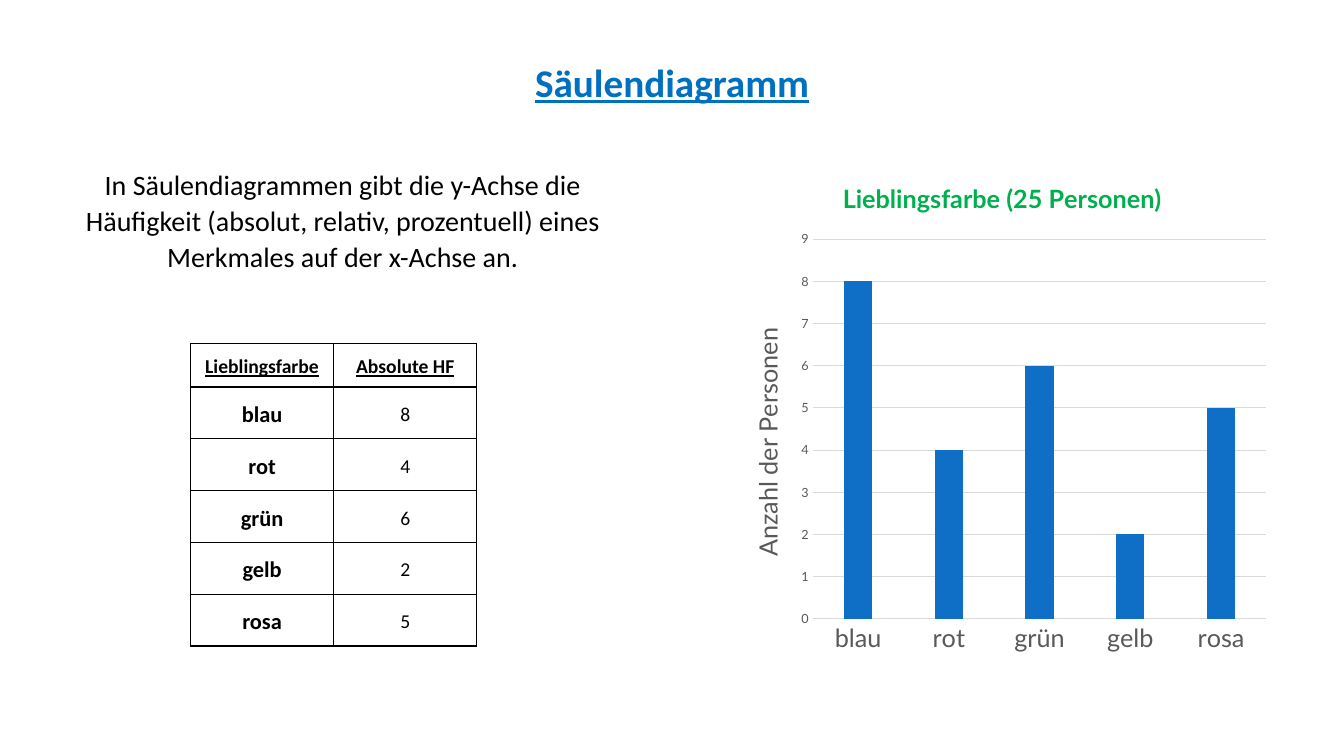
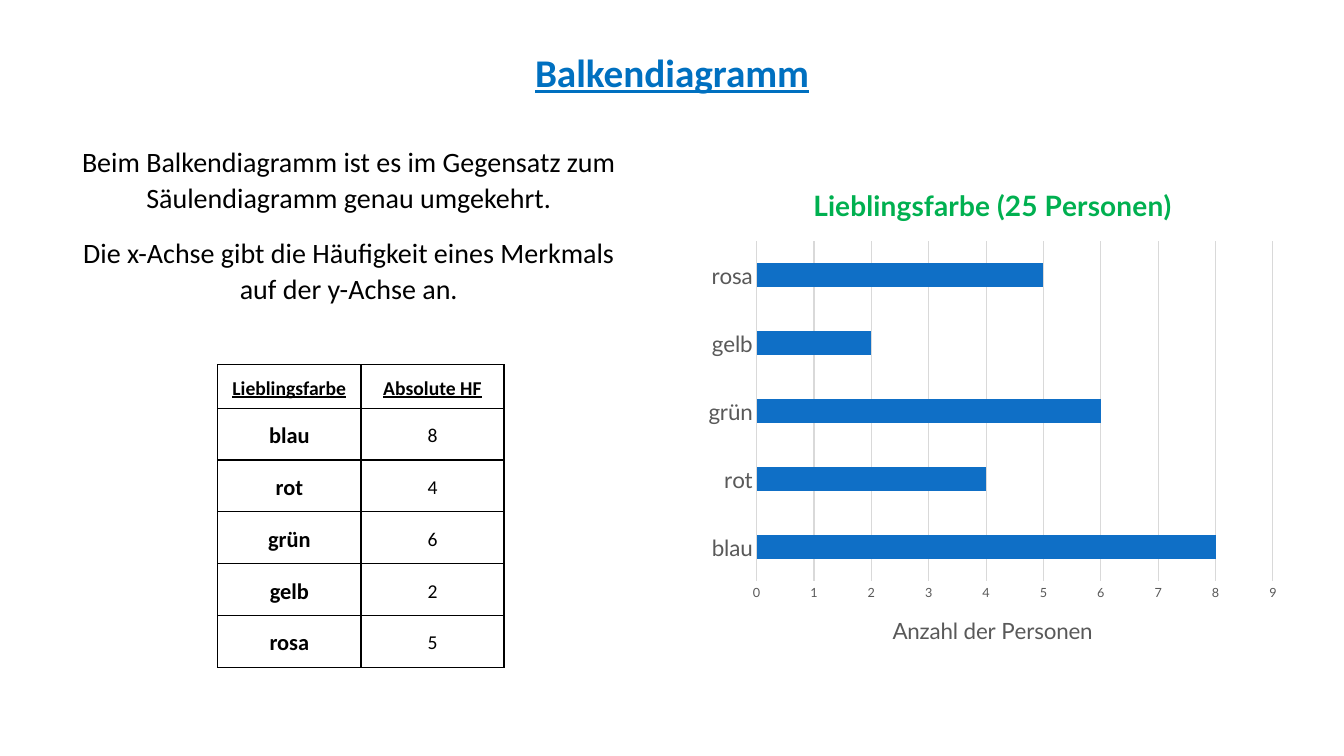
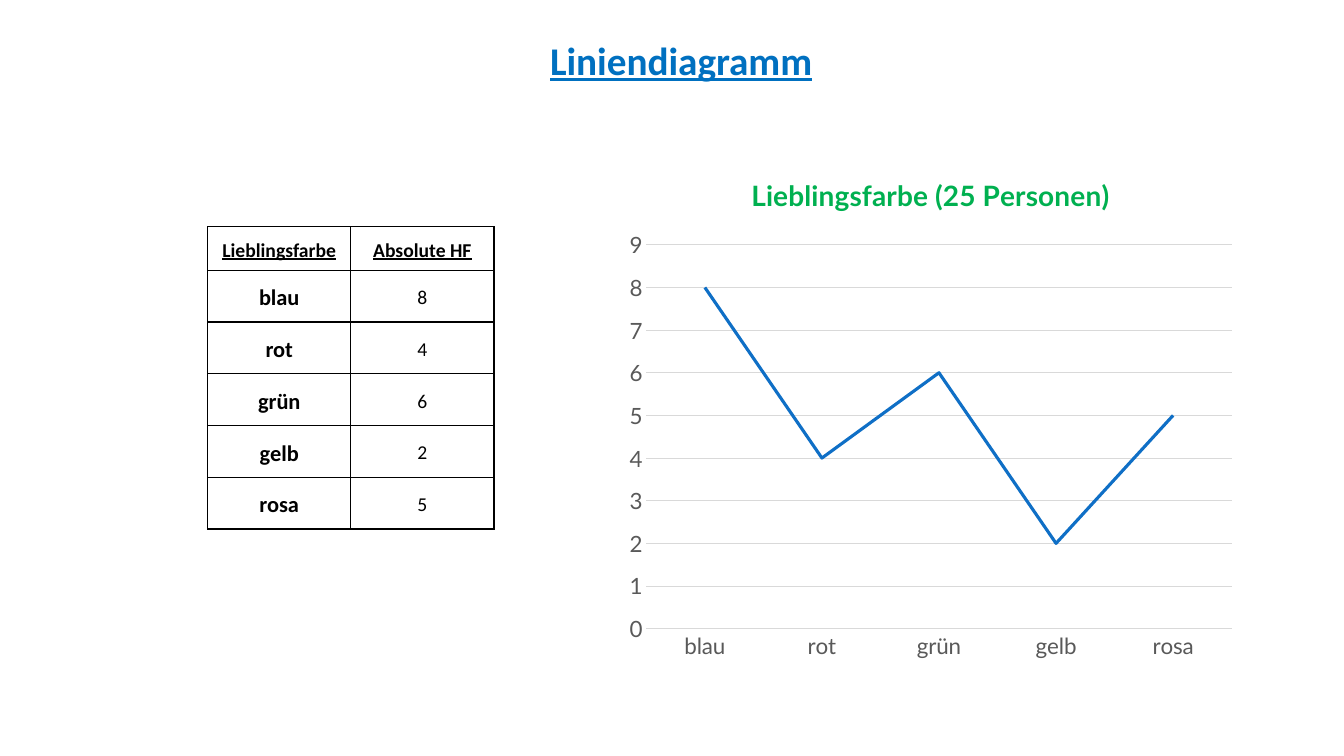
from lxml import etree
from pptx import Presentation
from pptx.chart.data import CategoryChartData as ChartData
from pptx.dml.color import RGBColor as RGB
from pptx.enum.chart import XL_CHART_TYPE as Kind, XL_TICK_MARK as Tick
from pptx.enum.text import MSO_ANCHOR as Anchor, MSO_AUTO_SIZE as Fit, PP_ALIGN as Align
from pptx.oxml.ns import qn
from pptx.util import Inches, Pt

# Shared look and data
COLORS = {"title": "0070C0", "text": "000000", "head": "00B050",
          "axis": "595959", "grid": "D9D9D9", "data": "0F6FC6"}
FONT, CHART_FONT = "Calibri", "Lato"
VOTES = {"blau": 8, "rot": 4, "grün": 6, "gelb": 2, "rosa": 5}
COL_W, HEAD_H, TABLE_H = 1.42, 0.43, 3


def color(name):
    return RGB.from_string(COLORS[name])


def style(font, size, tone, bold=False, line=False, face=FONT):
    font.name, font.size = face, Pt(size)
    font.bold, font.underline = bold, line
    font.color.rgb = color(tone)


def space(para, after=8):
    para.alignment = Align.CENTER
    para.line_spacing, para.space_before, para.space_after = 1.07, Pt(0), Pt(after)


def place(shape, left, top, width, height):
    shape.left, shape.top = Inches(left), Inches(top)
    shape.width, shape.height = Inches(width), Inches(height)


def add_page(deck, text, *spot):
    """Add a slide with its underlined title."""
    page = deck.slides.add_slide(deck.slide_layouts[5])
    title = page.shapes.title
    place(title, *spot)
    frame = title.text_frame
    frame.text = text
    frame.word_wrap, frame.auto_size = False, Fit.NONE
    frame.vertical_anchor = Anchor.TOP
    para = frame.paragraphs[0]
    para.alignment = Align.CENTER
    style(para.runs[0].font, 28, "title", True, True)
    return page


def add_note(page, texts, *spot):
    """Add centred explanatory paragraphs."""
    frame = page.shapes.add_textbox(*map(Inches, spot)).text_frame
    frame.word_wrap = True
    frame.text = "\n".join(texts)
    for para in frame.paragraphs:
        space(para, 13.5)
        style(para.runs[0].font, 20, "text")


def add_edges(cell):
    props = cell._tc.get_or_add_tcPr()
    for side in "LRTB":
        edge = etree.SubElement(props, qn(f"a:ln{side}"), w=str(Pt(1)))
        fill = etree.SubElement(edge, qn("a:solidFill"))
        etree.SubElement(fill, qn("a:srgbClr"), val=COLORS["text"])


def fill_cell(cell, text, size, bold, line):
    add_edges(cell)
    cell.fill.background()
    cell.vertical_anchor = Anchor.MIDDLE
    cell.margin_left = cell.margin_right = Inches(0.14)
    cell.margin_top, cell.margin_bottom = Inches(0.02), 0
    cell.text_frame.text = text
    para = cell.text_frame.paragraphs[0]
    space(para)
    style(para.runs[0].font, size, "text", bold, line)


def add_votes(page, left, top):
    """Add the frequency table."""
    rows = [("Lieblingsfarbe", "Absolute HF"), *VOTES.items()]
    table = page.shapes.add_table(len(rows), 2, Inches(left), Inches(top),
                                  Inches(2 * COL_W), Inches(TABLE_H)).table
    table.first_row = table.horz_banding = False
    for col in table.columns:
        col.width = Inches(COL_W)
    for r, row in enumerate(rows):
        head = r == 0
        table.rows[r].height = Inches(HEAD_H if head else (TABLE_H - HEAD_H) / len(VOTES))
        for c, value in enumerate(row):
            name = c == 0
            size = 16 if name and not head else 14
            fill_cell(table.cell(r, c), str(value), size, head or name, head)


def set_title(title, text, size, tone, bold):
    title.text_frame.text = text
    run = title.text_frame.paragraphs[0].runs[0]
    style(run.font, size, tone, bold, face=CHART_FONT)


def set_axis(axis, size):
    axis.major_tick_mark = axis.minor_tick_mark = Tick.NONE
    style(axis.tick_labels.font, size, "axis", face=CHART_FONT)


def set_line(line, tone, width):
    line.color.rgb = color(tone)
    line.width = Pt(width)


def add_graph(page, kind, spot, head, cat_size, val_size, label=None):
    """Add the chart with its heading and axes."""
    data = ChartData()
    data.categories = list(VOTES)
    data.add_series("Series 1", list(VOTES.values()))
    chart = page.shapes.add_chart(kind, *map(Inches, spot), data).chart
    style(chart.font, 10, "text", face=CHART_FONT)
    chart.has_legend = False
    chart.has_title = True
    set_title(chart.chart_title, "Lieblingsfarbe (25 Personen)", head, "head", True)

    cats, vals = chart.category_axis, chart.value_axis
    set_axis(cats, cat_size)
    set_line(cats.format.line, "grid", 0.75)
    set_axis(vals, val_size)
    vals.format.line.fill.background()
    vals.minimum_scale, vals.maximum_scale, vals.major_unit = 0, 9, 1
    vals.has_major_gridlines = True
    set_line(vals.major_gridlines.format.line, "grid", 0.75)
    if label:
        set_title(vals.axis_title, label, cat_size, "axis", False)
        turn = -5400000 if kind == Kind.COLUMN_CLUSTERED else 0
        for body in vals.axis_title._element.iter(qn("a:bodyPr")):
            body.set("rot", str(turn))

    plot = chart.plots[0]
    plot.vary_by_categories = False
    series = plot.series[0]
    if kind == Kind.LINE:
        series.smooth = False
        set_line(series.format.line, "data", 2.25)
    else:
        series.format.fill.solid()
        series.format.fill.fore_color.rgb = color("data")
    return plot


def main():
    deck = Presentation()
    deck.slide_width, deck.slide_height = Inches(13.33), Inches(7.5)
    label = "Anzahl der Personen"

    # Column chart
    page = add_page(deck, "Säulendiagramm", 5.19, 0.53, 2.95, 0.57)
    add_votes(page, 1.89, 3.41)
    add_note(page, ["In Säulendiagrammen gibt die y-Achse die Häufigkeit (absolut, relativ, "
                    "prozentuell) eines Merkmales auf der x-Achse an."],
             0.67, 1.59, 5.46, 1.17)
    plot = add_graph(page, Kind.COLUMN_CLUSTERED, (7.21, 1.59, 5.46, 4.99), 18, 18, 9, label)
    plot.gap_width, plot.overlap = 219, -27

    # Bar chart
    page = add_page(deck, "Balkendiagramm", 5.19, 0.43, 2.95, 0.57)
    add_votes(page, 2.16, 3.62)
    add_note(page, ["Beim Balkendiagramm ist es im Gegensatz zum Säulendiagramm genau umgekehrt.",
                    "Die x-Achse gibt die Häufigkeit eines Merkmals auf der y-Achse an."],
             0.63, 1.36, 5.66, 1.78)
    plot = add_graph(page, Kind.BAR_CLUSTERED, (6.91, 1.63, 5.87, 4.99), 20, 16, 9, label)
    plot.gap_width = 182

    # Line chart
    page = add_page(deck, "Liniendiagramm", 5.34, 0.31, 2.83, 0.57)
    add_votes(page, 2.06, 2.25)
    add_graph(page, Kind.LINE, (6.12, 1.53, 6.22, 5.11), 20, 16, 16)

    deck.save("out.pptx")


if __name__ == "__main__":
    main()
